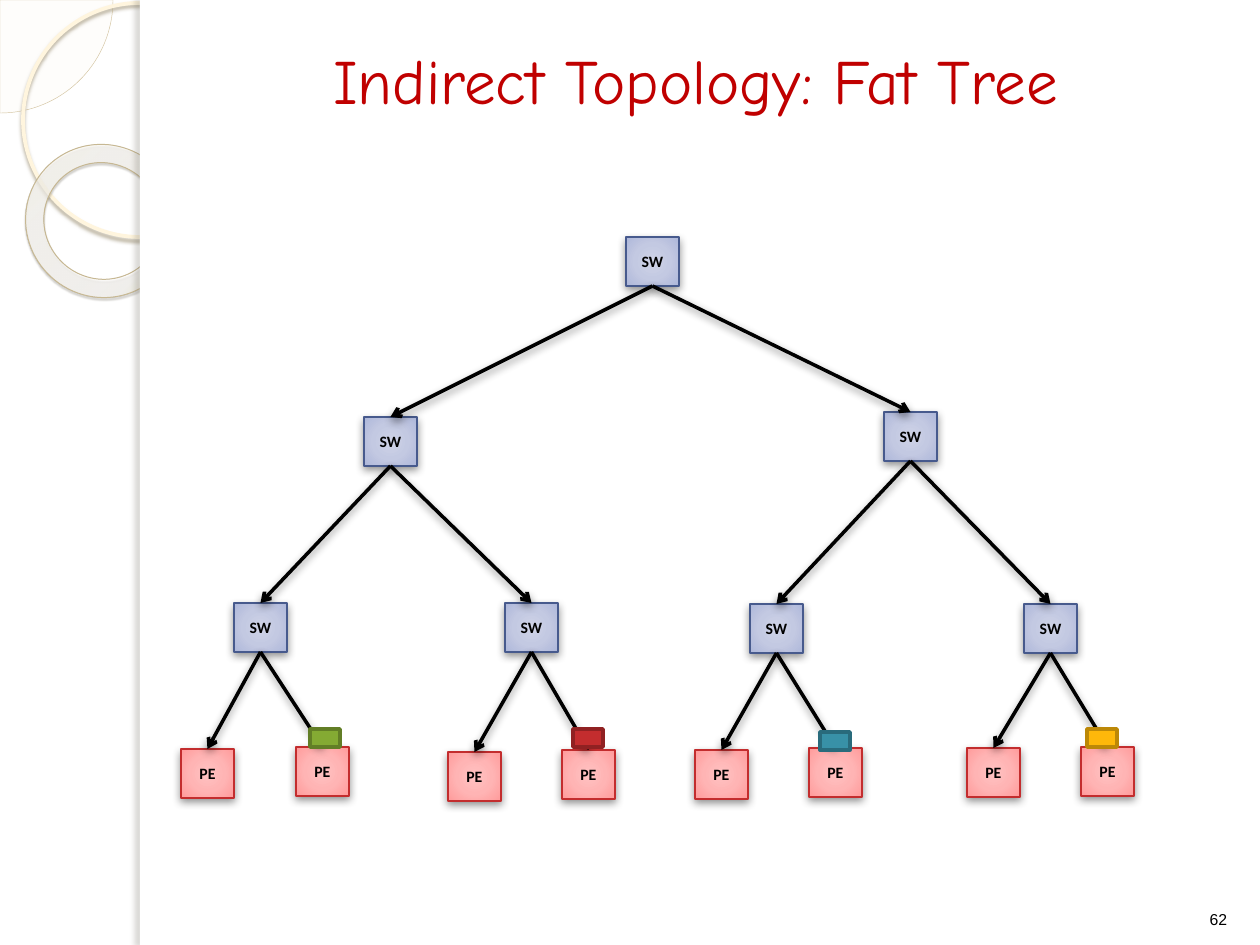
import dataclasses

import pptx
import pptx.dml.color
import pptx.enum.shapes
import pptx.enum.text
import pptx.oxml
import pptx.oxml.ns
import pptx.util
from lxml import etree

PX_PER_INCH = 126
SHAPE = pptx.enum.shapes.MSO_SHAPE
ALIGN = pptx.enum.text.PP_ALIGN
ANCHOR = pptx.enum.text.MSO_ANCHOR
qn = pptx.oxml.ns.qn


@dataclasses.dataclass(frozen=True)
class Style:
    """Gradient stops are (position %, colour, opacity %)."""
    stops: tuple
    line: str
    centre: tuple = (50, 50, 50, 50)


@dataclasses.dataclass(frozen=True)
class Theme:
    """Shadows are (colour, opacity %, blur pt, distance pt, degrees)."""
    title_font: str = "Comic Neue"
    title_size: int = 36
    title_color: str = "C00000"
    node_font: str = "Calibri"
    number_font: str = "Arial"
    small_size: int = 9
    ink: str = "000000"
    paper: str = "FFFFFF"
    link_width: float = 2
    node_line_width: float = 0.75
    node_shadow: tuple = ("000000", 43, 5, 2, 90)
    panel_shadow: tuple = ("736F63", 25, 3, 3, 180)
    circle_line: str = "FFF5DE"
    circle_shadow: tuple = ("B0A68F", 85, 2, 2, 90)
    pie_fill: str = "FEFAF4"
    pie_line: str = "D3C39F"
    ring_shadow: tuple = ("5A5444", 35, 1, 1.2, 75)
    ring: Style = Style(((0, "FFFCF6", 70), (70, "FFFEFB", 55), (100, "F0D28E", 60)),
                        "C7B893", (-408, -50, 508, 150))
    switch: Style = Style(((0, "CFD3E7", 100), (50, "C3C9E2", 100),
                           (97, "AFB8DA", 100), (100, "A8B2DA", 100)), "475A8D")
    processor: Style = Style(((0, "FFC2C2", 100), (50, "FFB4B4", 100),
                              (97, "FF9C9C", 100), (100, "FF9595", 100)), "C32D2E")


THEME = Theme()
NODE_SIZE = (53, 49)
TAG_SIZE = (30, 18)

# Left and top of each node, level by level: node i has children 2i + 1 and 2i + 2.
SWITCHES = [(626, 237),
            (364, 417), (884, 412),
            (234, 603), (505, 603), (750, 604), (1024, 604)]
PROCESSORS = [(181, 749), (296, 747), (448, 752), (562, 750),
              (695, 750), (809, 748), (967, 748), (1081, 747)]

# Left, top, fill and line of each coloured tag.
TAGS = [(820, 732, "3891A7", "296B7C"), (310, 729, "84AA33", "627E26"),
        (573, 729, "C32D2E", "902122"), (1087, 729, "FEB80A", "BC8807")]


def px(value):
    return pptx.util.Emu(round(value * 914400 / PX_PER_INCH))


def rgb(color):
    return pptx.dml.color.RGBColor.from_string(color)


def color_xml(color, opacity):
    return f'<a:srgbClr val="{color}"><a:alpha val="{opacity * 1000}"/></a:srgbClr>'


def parse_drawing(tag, attributes, content):
    namespace = pptx.oxml.ns.nsdecls("a")
    return pptx.oxml.parse_xml(f"<a:{tag} {namespace} {attributes}>{content}</a:{tag}>")


def set_shadow(shape, shadow=None):
    """Give the shape this shadow, or none in place of the inherited one."""
    content = ""
    if shadow:
        color, opacity, blur, distance, angle = shadow
        content = (f'<a:outerShdw blurRad="{pptx.util.Pt(blur)}" dist="{pptx.util.Pt(distance)}" '
                   f'dir="{angle * 60000}" algn="ctr" rotWithShape="0">'
                   f'{color_xml(color, opacity)}</a:outerShdw>')
    shape.element.spPr.append(parse_drawing("effectLst", "", content))


def set_gradient(shape, style):
    stops = "".join(f'<a:gs pos="{position * 1000}">{color_xml(color, opacity)}</a:gs>'
                    for position, color, opacity in style.stops)
    edges = " ".join(f'{side}="{value * 1000}"' for side, value in zip("ltrb", style.centre))
    gradient = parse_drawing(
        "gradFill", 'rotWithShape="1"',
        f'<a:gsLst>{stops}</a:gsLst><a:path path="circle"><a:fillToRect {edges}/></a:path>')
    shape.fill.background()
    properties = shape.element.spPr
    properties.replace(properties.find(qn("a:noFill")), gradient)


def set_line(shape, color, width):
    shape.line.color.rgb = rgb(color)
    shape.line.width = pptx.util.Pt(width)


def write_text(shape, text, font, size, color, anchor=ANCHOR.MIDDLE, bold=False):
    frame = shape.text_frame
    frame.text = text
    frame.vertical_anchor = anchor
    paragraph = frame.paragraphs[0]
    paragraph.alignment = ALIGN.CENTER
    run_font = paragraph.runs[0].font
    run_font.name = font
    run_font.size = pptx.util.Pt(size)
    run_font.bold = bold
    run_font.color.rgb = rgb(color)


def add_shape(slide, kind, box, fill=None, line=None, line_width=1, shadow=None):
    """Add a preset shape; fill is a colour, a Style or None."""
    shape = slide.shapes.add_shape(kind, *map(px, box))
    if isinstance(fill, Style):
        set_gradient(shape, fill)
    elif fill:
        shape.fill.solid()
        shape.fill.fore_color.rgb = rgb(fill)
    else:
        shape.fill.background()
    if line:
        set_line(shape, line, line_width)
    else:
        shape.line.fill.background()
    set_shadow(shape, shadow)
    return shape


def add_side_decoration(slide):
    pie = add_shape(slide, SHAPE.PIE, (-113, -113, 226, 226), THEME.pie_fill, THEME.pie_line, 0.25)
    pie.adjustments[0] = 0
    pie.adjustments[1] = 54
    pie_color = pie.element.spPr.find(qn("a:solidFill")).find(qn("a:srgbClr"))
    etree.SubElement(pie_color, qn("a:alpha"), val="33000")

    add_shape(slide, SHAPE.OVAL, (23, 3, 234, 234), None,
              THEME.circle_line, 2.15, THEME.circle_shadow)
    ring = add_shape(slide, SHAPE.DONUT, (25, 145, 155, 152), THEME.ring,
                     THEME.ring.line, 0.58, THEME.ring_shadow)
    ring.rotation = 38.6
    ring.adjustments[0] = 0.12

    add_shape(slide, SHAPE.RECTANGLE, (140, 0, 1120, 945), THEME.paper)
    add_shape(slide, SHAPE.RECTANGLE, (140, 0, 10, 945), THEME.paper, shadow=THEME.panel_shadow)


def add_title(slide, text):
    title = slide.shapes.title
    title.left, title.top, title.width, title.height = map(px, (159, 0, 1073, 158))
    write_text(title, text, THEME.title_font, THEME.title_size, THEME.title_color)
    title.element.getparent().append(title.element)  # in front of the white panel


def add_slide_number(slide, text):
    box = slide.shapes.add_textbox(*map(px, (1187, 869, 63, 66)))
    box.text_frame.word_wrap = True
    write_text(box, text, THEME.number_font, THEME.small_size, THEME.ink, ANCHOR.BOTTOM)


def add_node(slide, position, label, style):
    node = add_shape(slide, SHAPE.RECTANGLE, (*position, *NODE_SIZE), style,
                     style.line, THEME.node_line_width, THEME.node_shadow)
    node.text_frame.word_wrap = False
    write_text(node, label, THEME.node_font, THEME.small_size, THEME.ink, bold=True)
    return node


def add_link(slide, parent, child):
    """Draw an arrow from the bottom of the parent to the top of the child."""
    link = slide.shapes.add_connector(pptx.enum.shapes.MSO_CONNECTOR.STRAIGHT, 0, 0, 0, 0)
    link.begin_connect(parent, 2)
    link.end_connect(child, 0)
    set_line(link, THEME.ink, THEME.link_width)
    etree.SubElement(link.element.spPr.find(qn("a:ln")), qn("a:tailEnd"), type="arrow")
    set_shadow(link, THEME.node_shadow)


def add_tree(slide):
    nodes = [add_node(slide, position, "SW", THEME.switch) for position in SWITCHES]
    nodes += [add_node(slide, position, "PE", THEME.processor) for position in PROCESSORS]
    for index, child in enumerate(nodes[1:]):
        add_link(slide, nodes[index // 2], child)


def main():
    presentation = pptx.Presentation()
    presentation.slide_width, presentation.slide_height = px(1260), px(945)
    slide = presentation.slides.add_slide(presentation.slide_layouts[5])
    add_side_decoration(slide)
    add_title(slide, "Indirect Topology: Fat Tree")
    add_slide_number(slide, "62")
    add_tree(slide)
    for left, top, fill, line in TAGS:
        add_shape(slide, SHAPE.RECTANGLE, (left, top, *TAG_SIZE), fill, line, THEME.link_width)
    presentation.save("out.pptx")


if __name__ == "__main__":
    main()
